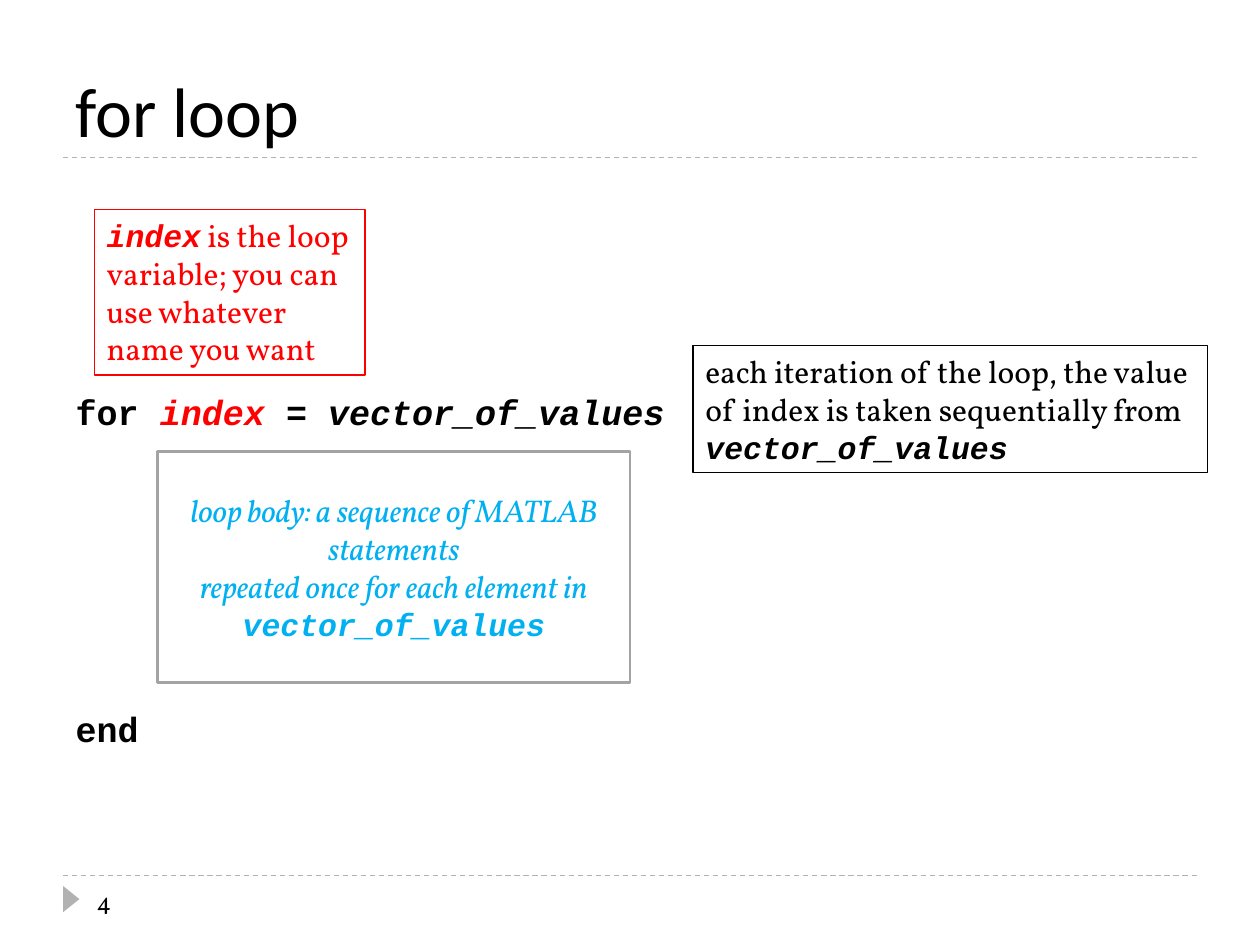
from lxml.etree import SubElement
from pptx import Presentation
from pptx.dml.color import RGBColor
from pptx.enum.dml import MSO_LINE
from pptx.enum.shapes import MSO_CONNECTOR, MSO_SHAPE
from pptx.enum.text import MSO_ANCHOR as Anchor, MSO_AUTO_SIZE as AutoSize, PP_ALIGN as Align
from pptx.oxml.ns import qn
from pptx.util import Cm, Pt

BLACK, RED, BLUE = "000000", "FF0000", "00B0F0"
RULE_GREY, FRAME_GREY = "B2B2B2", "A3A3A3"
TITLE_FONT, TEXT_FONT, CODE_FONT = "Calibri", "Vollkorn", "Courier New"


def color(value):
    return RGBColor.from_string(value)


def text(words, **style):
    """Describe one run in the text font; style overrides the defaults."""
    return {"words": words, "font": TEXT_FONT, "bold": False, "italic": False, **style}


def code(words, **style):
    return text(words, **{"font": CODE_FONT, "bold": True, **style})


class SlideBuilder:
    def __init__(self, page):
        self.page = page

    def place(self, shape, left, top, width, height):
        shape.left, shape.top = Cm(left), Cm(top)
        shape.width, shape.height = Cm(width), Cm(height)

    def add_text(self, frame, paragraphs, size, ink=BLACK, align=Align.LEFT):
        for number, runs in enumerate(paragraphs):
            para = frame.add_paragraph() if number else frame.paragraphs[0]
            para.alignment = align
            for style in runs:
                span = para.add_run()
                span.text = style["words"]
                font = span.font
                font.name, font.size = style["font"], Pt(size)
                font.bold, font.italic = style["bold"], style["italic"]
                font.color.rgb = color(style.get("ink", ink))

    def title(self, words, *area):
        box = self.page.shapes.title
        self.place(box, *area)
        frame = box.text_frame
        frame.vertical_anchor = Anchor.BOTTOM
        frame.auto_size = AutoSize.NONE
        self.add_text(frame, [[text(words, font=TITLE_FONT)]], 40)

    def code_body(self, lines, *area, inset, gap):
        """Fill the body with code lines, starting at inset and gap points apart."""
        box = self.page.placeholders[1]
        self.place(box, *area)
        frame = box.text_frame
        frame.margin_top = Cm(inset)
        frame.vertical_anchor = Anchor.TOP
        frame.auto_size = AutoSize.NONE
        self.add_text(frame, lines, 20)
        for number, para in enumerate(frame.paragraphs):
            para.space_before = Pt(gap if number else 0)
            properties = para._p.get_or_add_pPr()
            properties.set("marL", str(Cm(0.76)))
            properties.set("indent", str(-Cm(0.76)))
            SubElement(properties, qn("a:buNone"))

    def rule(self, left, right, height):
        line = self.page.shapes.add_connector(
            MSO_CONNECTOR.STRAIGHT, Cm(left), Cm(height), Cm(right), Cm(height))
        line.line.color.rgb = color(RULE_GREY)
        line.line.width = Pt(0.75)
        line.line.dash_style = MSO_LINE.DASH
        SubElement(line._element.spPr, qn("a:effectLst"))

    def marker(self, *area):
        shape = self.page.shapes.add_shape(MSO_SHAPE.ISOSCELES_TRIANGLE, *map(Cm, area))
        shape.rotation = 90
        shape.shadow.inherit = False
        shape.fill.solid()
        shape.fill.fore_color.rgb = color(RULE_GREY)
        shape.line.fill.background()

    def label(self, words, *area):
        frame = self.page.shapes.add_textbox(*map(Cm, area)).text_frame
        frame.word_wrap = True
        frame.vertical_anchor = Anchor.MIDDLE
        self.add_text(frame, [[text(words)]], 14)

    def framed_text(self, paragraphs, *area, edge, ink, weight=0.75, align=Align.LEFT,
                    anchor=Anchor.TOP, wrap=True, fit=AutoSize.SHAPE_TO_FIT_TEXT):
        box = self.page.shapes.add_shape(MSO_SHAPE.RECTANGLE, *map(Cm, area))
        box.shadow.inherit = False
        box.fill.background()
        box.line.color.rgb = color(edge)
        box.line.width = Pt(weight)
        frame = box.text_frame
        frame.word_wrap, frame.auto_size = wrap, fit
        frame.vertical_anchor = anchor
        self.add_text(frame, paragraphs, 18, ink, align)


def main():
    deck = Presentation()
    deck.slide_width, deck.slide_height = Cm(25.4), Cm(19.05)
    slide = SlideBuilder(deck.slides.add_slide(deck.slide_layouts[1]))

    for height in (17.65, 3.18):
        slide.rule(1.27, 24.13, height)
    slide.marker(1.17, 17.96, 0.53, 0.33)
    slide.title("for loop", 1.27, 0.43, 22.86, 2.75)
    slide.code_body(
        [[code("for "), code("index", ink=RED, italic=True),
          code(" = vector_of_values", italic=True)],
         [code("end")]],
        1.27, 3.38, 22.86, 13.72, inset=4.5, gap=157)
    slide.label("4", 1.7, 17.65, 5.5, 1.02)

    slide.framed_text(
        [[text("loop body: a sequence of MATLAB statements", italic=True)],
         [text("repeated once for each element in ", italic=True),
          code("vector_of_values", italic=True)]],
        3.18, 9.1, 9.52, 4.66, edge=FRAME_GREY, ink=BLUE, weight=1.5,
        align=Align.CENTER, anchor=Anchor.MIDDLE, fit=AutoSize.NONE)
    slide.framed_text(
        [[code("index", italic=True), text(" is the loop")],
         [text("variable; you can")],
         [text("use whatever")],
         [text("name you want")]],
        1.9, 4.23, 5.46, 3.33, edge=RED, ink=RED, wrap=False)
    slide.framed_text(
        [[text("each iteration of the loop, the value of index is taken sequentially from "),
          code("vector_of_values", italic=True)]],
        13.97, 6.97, 10.37, 2.56, edge=BLACK, ink=BLACK)

    deck.save("out.pptx")


if __name__ == "__main__":
    main()
